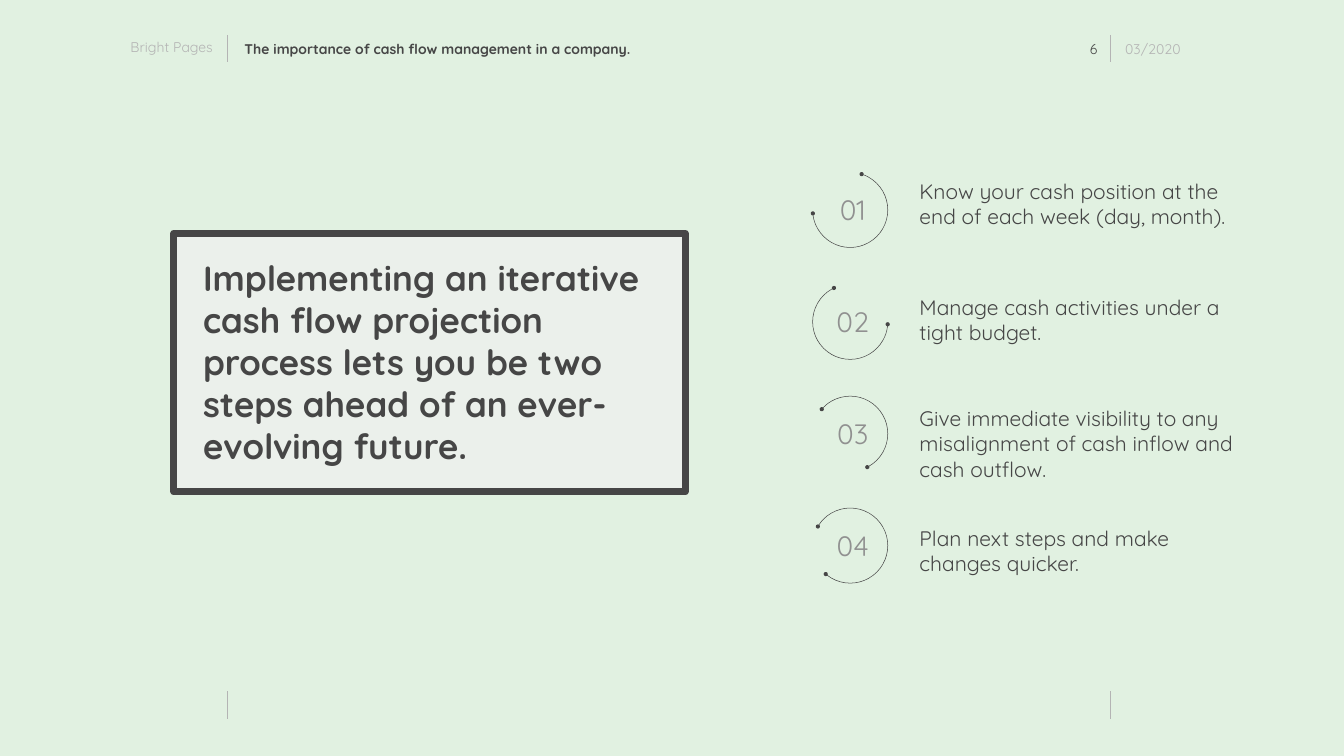
import pptx
import pptx.dml.color
import pptx.enum.shapes
import pptx.enum.text
import pptx.oxml
import pptx.oxml.ns
import pptx.util
from pptx.dml.color import RGBColor
from pptx.util import Inches

BACKGROUND = RGBColor(0xE1, 0xF1, 0xE1)
DARK = RGBColor(0x46, 0x46, 0x46)
GREY = RGBColor(0x90, 0x90, 0x90)
LIGHT_GREY = RGBColor(0xB4, 0xB4, 0xB4)
PANEL = RGBColor(0xF0, 0xF0, 0xF0)

FONT = "Quicksand"
ALIGN = pptx.enum.text.PP_ALIGN
SHAPE = pptx.enum.shapes.MSO_SHAPE

RULE_XS = (4.5, 22.03)
STEP_TOP, STEP_PITCH = 3.42, 2.22
STEP_LEFT, RING_SIZE = 16.12, 1.49

# Text, top of the text, height of the text, arc start and end adjustments
STEPS = [
    ("Know your cash position at the end of each week (day, month).",
     3.49, 1.11, (10.61, 158.8)),
    ("Manage cash activities under a tight budget.",
     5.79, 1.11, (56.25, 200.6)),
    ("Give immediate visibility to any misalignment of cash inflow and cash outflow.",
     8, 1.62, (186.43, 91.81)),
    ("Plan next steps and make changes quicker.",
     10.37, 1.11, (180.35, 132.4)),
]


def add_element(parent, tag, **attributes):
    element = pptx.oxml.parse_xml(f"<a:{tag} {pptx.oxml.ns.nsdecls('a')}/>")
    for name, value in attributes.items():
        element.set(name, value)
    parent.append(element)


def add_text(slide, text, left, top, width, height, *, size=20, color=DARK,
             bold=False, align=ALIGN.LEFT, inset=0.1):
    box = slide.shapes.add_textbox(
        Inches(left), Inches(top), Inches(width), Inches(height))
    frame = box.text_frame
    frame.word_wrap = True
    frame.auto_size = pptx.enum.text.MSO_AUTO_SIZE.SHAPE_TO_FIT_TEXT
    frame.margin_left = frame.margin_right = Inches(inset)
    frame.margin_top = frame.margin_bottom = Inches(inset / 2)
    paragraph = frame.paragraphs[0]
    paragraph.alignment = align
    run = paragraph.add_run()
    run.text = text
    run.font.name = FONT
    run.font.size = pptx.util.Pt(size)
    run.font.bold = bold
    run.font.color.rgb = color


def set_line(shape, color, width):
    shape.line.color.rgb = color
    shape.line.width = pptx.util.Pt(width)


def add_rules(slide, top, bottom):
    for x in RULE_XS:
        rule = slide.shapes.add_connector(
            pptx.enum.shapes.MSO_CONNECTOR.STRAIGHT,
            Inches(x), Inches(top), Inches(x), Inches(bottom))
        set_line(rule, LIGHT_GREY, 0.75)
        add_element(rule._element.spPr, "effectLst")


def add_ring(slide, top, adjustments):
    ring = slide.shapes.add_shape(
        SHAPE.ARC, Inches(STEP_LEFT), Inches(top),
        Inches(RING_SIZE), Inches(RING_SIZE))
    ring.rotation = 270
    ring.adjustments[0], ring.adjustments[1] = adjustments
    ring.shadow.inherit = False
    ring.fill.background()
    set_line(ring, DARK, 0.75)
    line = ring.line._get_or_add_ln()
    add_element(line, "headEnd", type="oval")
    add_element(line, "tailEnd", type="oval")


def add_panel(slide, left, top, width, height):
    panel = slide.shapes.add_shape(
        SHAPE.RECTANGLE, Inches(left), Inches(top),
        Inches(width), Inches(height))
    panel.shadow.inherit = False
    panel.fill.solid()
    panel.fill.fore_color.rgb = PANEL
    fill_color = panel._element.spPr.find(
        f".//{pptx.oxml.ns.qn('a:srgbClr')}")
    add_element(fill_color, "alpha", val="70000")
    set_line(panel, DARK, 10)


def add_header(slide):
    add_rules(slide, 0.69, 1.24)
    add_text(slide, "Bright Pages", 0.66, 0.71, 3.66, 0.44,
             color=LIGHT_GREY, align=ALIGN.RIGHT)
    add_text(slide, "The importance of cash flow management in a company.",
             4.75, 0.75, 9.08, 0.44, bold=True)
    add_text(slide, "6", 21.06, 0.7, 0.91, 0.54, align=ALIGN.RIGHT, inset=0.2)
    add_text(slide, "03/2020", 22.22, 0.75, 3.66, 0.44, color=LIGHT_GREY)


def add_steps(slide):
    for index, (text, text_top, height, adjustments) in enumerate(STEPS):
        top = STEP_TOP + index * STEP_PITCH
        add_ring(slide, top, adjustments)
        add_text(slide, f"{index + 1:02}", STEP_LEFT, top + 0.36, 1.59, 0.77,
                 size=40, color=GREY, align=ALIGN.CENTER)
        add_text(slide, text, 18.14, text_top, 6.88, height, size=30)


def main():
    presentation = pptx.Presentation()
    presentation.slide_width = Inches(26.66)
    presentation.slide_height = Inches(15)
    slide = presentation.slides.add_slide(presentation.slide_layouts[6])
    slide.background.fill.solid()
    slide.background.fill.fore_color.rgb = BACKGROUND

    add_header(slide)

    # Key message
    add_panel(slide, 3.45, 4.63, 10.14, 5.13)
    add_text(slide, "Implementing an iterative cash flow projection process "
             "lets you be two steps ahead of an ever-evolving future.",
             3.93, 5.04, 9.36, 4.31, size=50, bold=True)

    # Numbered steps
    add_steps(slide)

    # Footer rules
    add_rules(slide, 13.72, 14.26)

    presentation.save("out.pptx")


if __name__ == "__main__":
    main()
